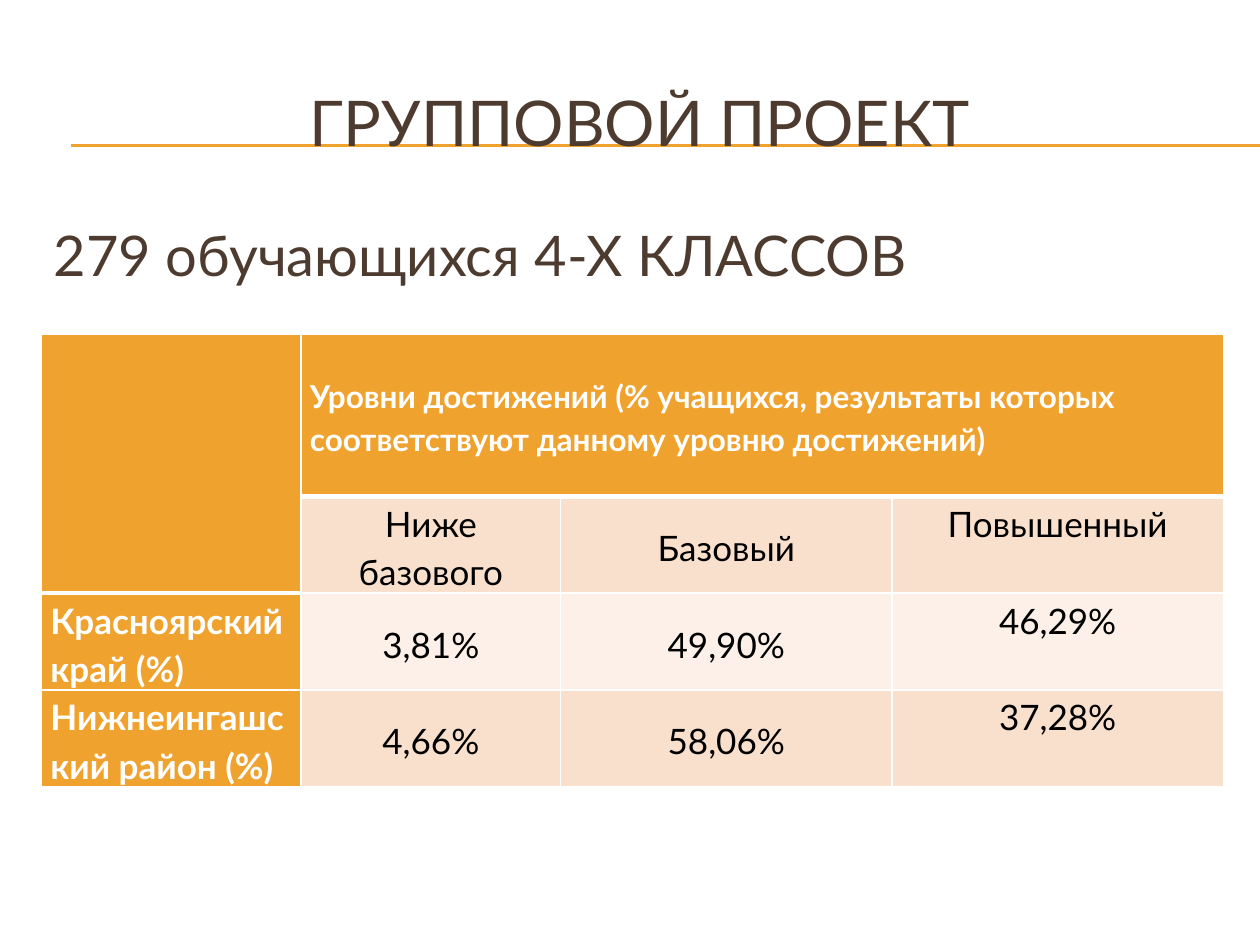
import pptx
import pptx.util
import pptx.dml.color
import pptx.enum.shapes
import pptx.enum.text
import pptx.oxml
import pptx.oxml.ns
import lxml.etree

Inches, Pt = pptx.util.Inches, pptx.util.Pt
ALIGN, ANCHOR = pptx.enum.text.PP_ALIGN, pptx.enum.text.MSO_ANCHOR
FONT = "Lato"
ORANGE, BROWN, WHITE, BLACK = "F0A22E", "4E3B30", "FFFFFF", "000000"
BANDS = ["F9E0CD", "FCF0E8"]

HEADINGS = [
    ("ГРУППОВОЙ ПРОЕКТ", (0.33, 0.5, 9.5, 0.92), 36, ANCHOR.MIDDLE,
     {"alignment": ALIGN.CENTER}),
    ("279 обучающихся 4-Х КЛАССОВ", (0.33, 1.7, 9.5, 4.95), 32, ANCHOR.TOP,
     {"alignment": ALIGN.LEFT, "space_before": Pt(6)}),
]
RULE_HEIGHTS = [1.15, 1.16]
LEVELS = [
    ["", "Уровни достижений (% учащихся, результаты которых соответствуют данному уровню достижений)", "", ""],
    ["", "Ниже базового", "Базовый", "Повышенный"],
    ["Красноярский край (%)", "3,81%", "49,90%", "46,29%"],
    ["Нижнеингашский район (%)", "4,66%", "58,06%", "37,28%"],
]
COLUMN_WIDTHS = [2.06, 2.06, 2.63, 2.63]
ROW_HEIGHTS = [1.29, 0.62, 0.62, 0.62]
CELL_FORMAT = {"margin_left": Inches(0.07), "margin_right": Inches(0.07),
               "margin_top": 0, "margin_bottom": 0}


def color(value):
    return pptx.dml.color.RGBColor.from_string(value)


def apply(target, values):
    for name, value in values.items():
        setattr(target, name, value)


def write(paragraph, text, size, text_color, bold, layout):
    apply(paragraph, layout)
    run = paragraph.add_run()
    run.text = text
    apply(run.font, {"name": FONT, "size": Pt(size), "bold": bold})
    run.font.color.rgb = color(text_color)


def add_borders(cell, bottom):
    properties = cell._tc.get_or_add_tcPr()
    widths = {"lnL": 1, "lnR": 1, "lnT": 1, "lnB": bottom}
    for position, (side, width) in enumerate(widths.items()):
        border = pptx.oxml.parse_xml(
            f'<a:{side} {pptx.oxml.ns.nsdecls("a")} w="{Pt(width)}"><a:solidFill>'
            f'<a:srgbClr val="{WHITE}"/></a:solidFill></a:{side}>')
        properties.insert(position, border)


def add_rule(slide, height):
    rule = slide.shapes.add_connector(
        pptx.enum.shapes.MSO_CONNECTOR.STRAIGHT,
        Inches(0.56), Inches(height), Inches(10), Inches(height))
    rule.line.color.rgb = color(ORANGE)
    rule.line.width = Pt(0.75)
    lxml.etree.SubElement(rule._element.spPr, pptx.oxml.ns.qn("a:effectLst"))


def add_heading(slide, text, place, size, anchor, layout):
    frame = slide.shapes.add_textbox(*map(Inches, place)).text_frame
    apply(frame, {"word_wrap": True, "vertical_anchor": anchor})
    write(frame.paragraphs[0], text, size, BROWN, False, layout)


def add_levels(slide):
    levels = slide.shapes.add_table(
        len(LEVELS), len(COLUMN_WIDTHS), Inches(0.33), Inches(2.65),
        Inches(sum(COLUMN_WIDTHS)), Inches(sum(ROW_HEIGHTS))).table
    for column, width in zip(levels.columns, COLUMN_WIDTHS):
        column.width = Inches(width)
    for row, height in zip(levels.rows, ROW_HEIGHTS):
        row.height = Inches(height)
    levels.cell(0, 0).merge(levels.cell(1, 0))
    levels.cell(0, 1).merge(levels.cell(0, 3))

    for r, texts in enumerate(LEVELS):
        for c, text in enumerate(texts):
            cell = levels.cell(r, c)
            header = r == 0 or c == 0
            top = r > 0 and c == 3
            apply(cell, CELL_FORMAT)
            cell.vertical_anchor = ANCHOR.TOP if top else ANCHOR.MIDDLE
            cell.fill.solid()
            cell.fill.fore_color.rgb = color(ORANGE if header else BANDS[(r - 1) % 2])
            add_borders(cell, 3 if r == 0 or (r, c) == (1, 0) else 1)
            if text:
                write(cell.text_frame.paragraphs[0], text, 18 if r == 0 else 20,
                      WHITE if header else BLACK, header,
                      {"alignment": ALIGN.LEFT if header else ALIGN.CENTER,
                       "line_spacing": 1.15, "space_after": Pt(10)})


def main():
    deck = pptx.Presentation()
    apply(deck, {"slide_width": Inches(10), "slide_height": Inches(7.5)})
    slide = deck.slides.add_slide(deck.slide_layouts[6])
    for height in RULE_HEIGHTS:
        add_rule(slide, height)
    for heading in HEADINGS:
        add_heading(slide, *heading)
    add_levels(slide)
    deck.save("out.pptx")


if __name__ == "__main__":
    main()
